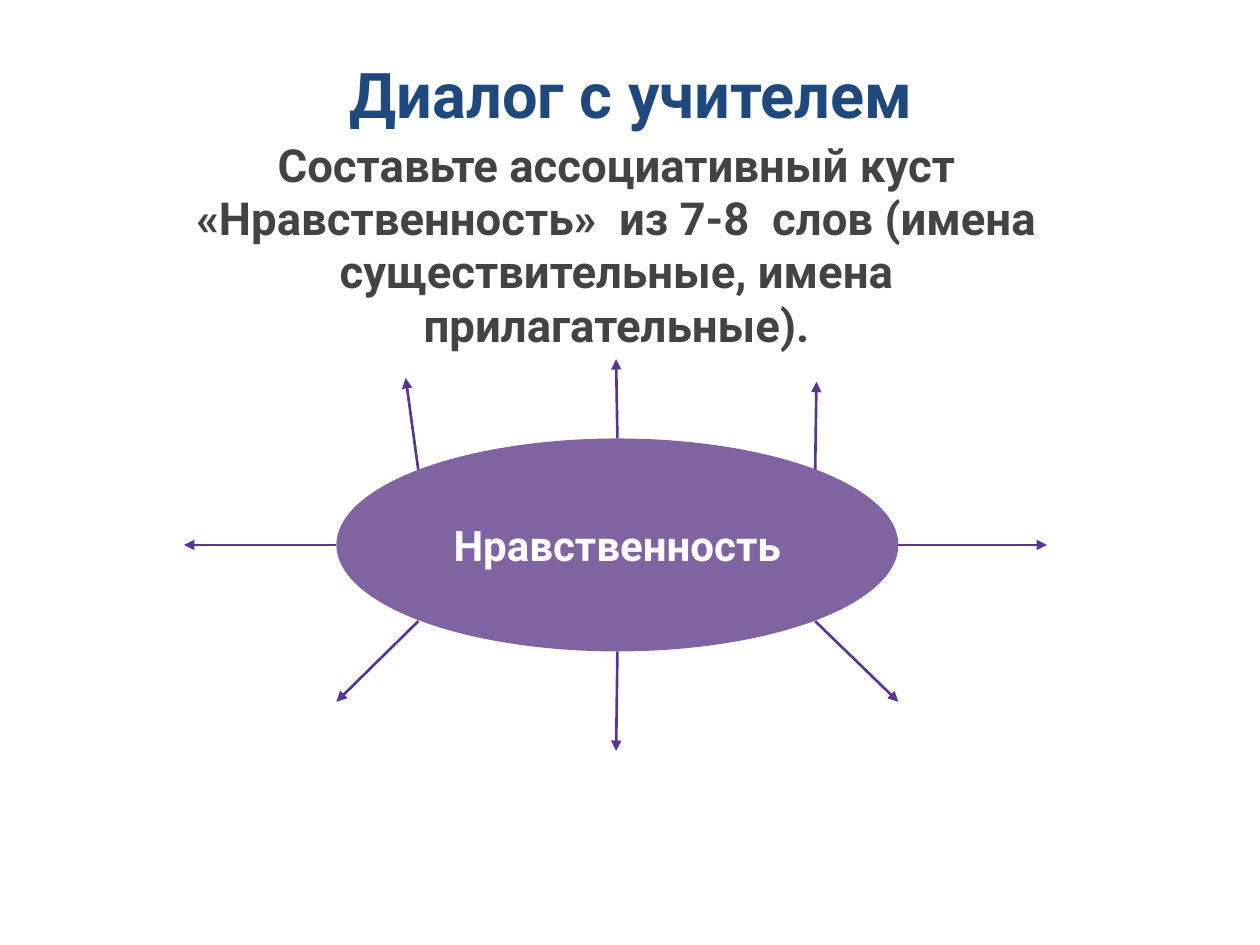
from lxml import etree
from pptx import Presentation
from pptx import util as u
from pptx.dml.color import RGBColor
from pptx.enum import shapes, text
from pptx.oxml.ns import qn

FONT = "Roboto"
ARROW, BUSH = "593593", "8064A2"


def color(hex_value):
    return RGBColor.from_string(hex_value)


def inches(*values):
    return [u.Inches(value) for value in values]


def write(frame, wording, size, hex_value, spacing=1.0):
    """Put one centred bold paragraph into a text frame."""
    frame.word_wrap = True
    paragraph = frame.paragraphs[0]
    paragraph.alignment = text.PP_ALIGN.CENTER
    paragraph.line_spacing = spacing
    run = paragraph.add_run()
    run.text = wording
    run.font.color.rgb = color(hex_value)
    font_format = {"name": FONT, "size": u.Pt(size), "bold": True}
    for name, value in font_format.items():
        setattr(run.font, name, value)


def add_title(slide, wording, box):
    title = slide.shapes.add_textbox(*inches(*box))
    title.text_frame.vertical_anchor = text.MSO_ANCHOR.MIDDLE
    write(title.text_frame, wording, 36, "1F497D", 0.9)


def add_task(slide, wording, box):
    task = slide.shapes.add_table(1, 1, *inches(*box)).table
    task.first_row = task.horz_banding = False
    cell = task.cell(0, 0)
    cell.fill.background()
    margins = {"margin_left": 0.09, "margin_right": 0.09,
               "margin_top": 0, "margin_bottom": 0}
    for name, value in margins.items():
        setattr(cell, name, u.Inches(value))
    write(cell.text_frame, wording, 26, "434343")


def add_ray(slide, start, end):
    ray = slide.shapes.add_connector(
        shapes.MSO_CONNECTOR.STRAIGHT, *inches(*start, *end))
    ray.line.color.rgb = color(ARROW)
    ray.line.width = u.Pt(1.5)
    # Arrowhead at the far end, and no shadow
    etree.SubElement(ray.line._get_or_add_ln(), qn("a:tailEnd"), type="triangle")
    etree.SubElement(ray._element.spPr, qn("a:effectLst"))


def add_concept(slide, wording, box):
    concept = slide.shapes.add_shape(shapes.MSO_SHAPE.OVAL, *inches(*box))
    concept.shadow.inherit = False
    concept.fill.solid()
    concept.fill.fore_color.rgb = color(BUSH)
    concept.line.fill.background()
    concept.text_frame.vertical_anchor = text.MSO_ANCHOR.MIDDLE
    write(concept.text_frame, wording, 24, "FFFFFF")


def main():
    deck = Presentation()
    deck.slide_width, deck.slide_height = inches(10, 7.5)
    slide = deck.slides.add_slide(deck.slide_layouts[6])

    # Heading and task
    add_title(slide, "Диалог с учителем", (0.98, 0.29, 8.06, 0.97))
    add_task(slide, "Составьте ассоциативный куст «Нравственность»  из 7-8  слов "
             "(имена существительные, имена прилагательные).",
             (1.05, 1.11, 7.69, 1.18))

    # Rays from the edge of the ellipse to the places for the words
    left, top, width, height = ellipse = (2.67, 3.48, 4.46, 1.69)
    right, bottom = left + width, top + height
    center, middle = left + width / 2, top + height / 2
    near_left, near_right = 3.32, 6.47
    upper, lower = 3.73, 4.93
    rays = [
        ((right, middle), (8.31, middle)),
        ((near_left, upper), (3.22, 3)),
        ((near_right, upper), (6.48, 3.03)),
        ((near_right, lower), (right, 5.57)),
        ((center, top), (4.89, 2.85)),
        ((left, middle), (1.46, middle)),
        ((near_left, lower), (left, 5.57)),
        ((center, bottom), (4.89, 5.96)),
    ]
    for start, end in rays:
        add_ray(slide, start, end)

    # Central concept
    add_concept(slide, "Нравственность", ellipse)

    deck.save("out.pptx")


if __name__ == "__main__":
    main()
